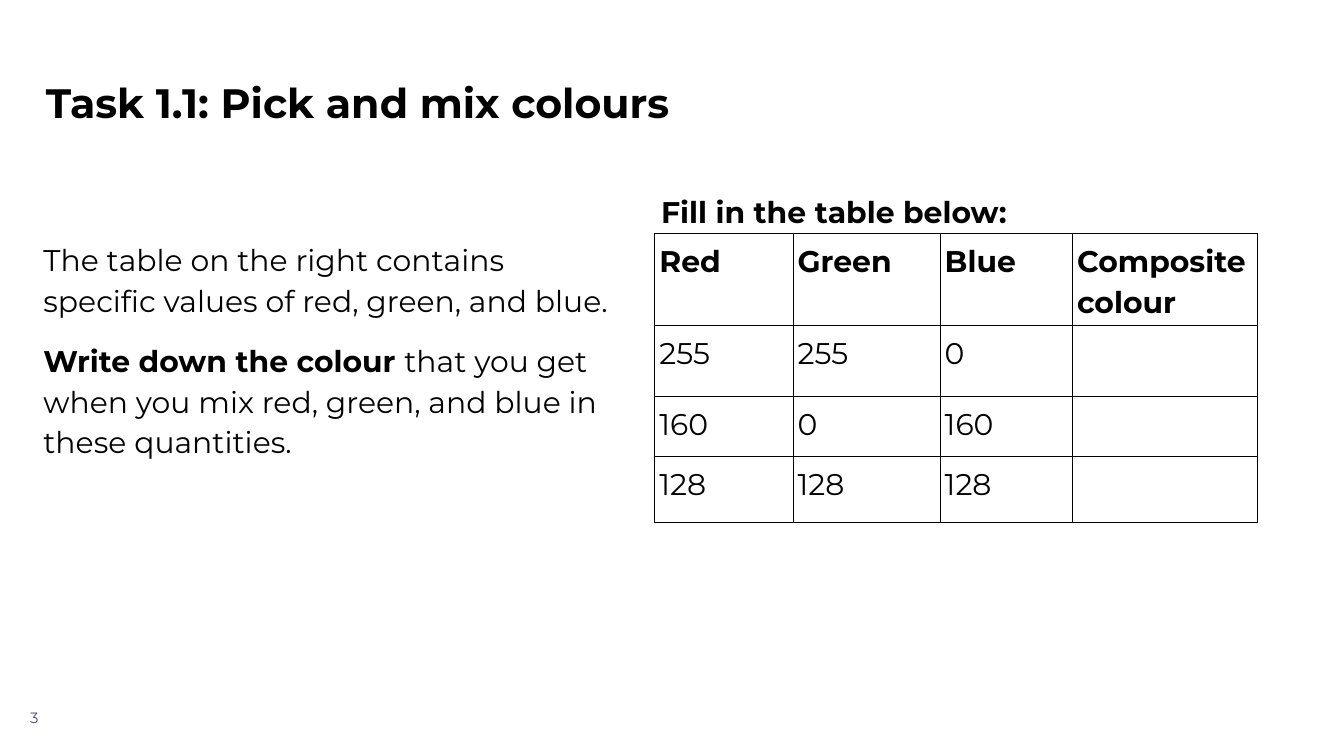
from pptx import Presentation
from pptx import util as u
from pptx.dml import color
from pptx.enum import text
from pptx.oxml import parse_xml
from pptx.oxml.ns import nsdecls

TITLE_ONLY = 5
BLACK = "000000"
PURPLE = "494985"


def rgb(value):
    return color.RGBColor.from_string(value)


def set_values(target, values):
    for name, value in values.items():
        setattr(target, name, value)


def margins(left, top, right, bottom):
    names = ("margin_left", "margin_top", "margin_right", "margin_bottom")
    return dict(zip(names, map(u.Cm, (left, top, right, bottom))))


class SlideBuilder:
    font = "Montserrat"
    line_spacing = 1.15

    def __init__(self, deck):
        self.slide = deck.slides.add_slide(deck.slide_layouts[TITLE_ONLY])

    def fill_paragraph(self, para, spans, size=32, fill=BLACK, **para_format):
        """Fill a paragraph with (wording, bold) spans."""
        set_values(para, {"alignment": text.PP_ALIGN.LEFT,
                          "line_spacing": self.line_spacing, **para_format})
        for wording, bold in spans:
            span = para.add_run()
            span.text = wording
            set_values(span.font, {"name": self.font, "size": u.Pt(size), "bold": bold})
            span.font.color.rgb = rgb(fill)

    def title(self, wording, left, top, width, height):
        box = self.slide.shapes.title
        set_values(box, {"left": u.Cm(left), "top": u.Cm(top),
                         "width": u.Cm(width), "height": u.Cm(height)})
        set_values(box.text_frame, {"word_wrap": True, "auto_size": text.MSO_AUTO_SIZE.NONE,
                                    "vertical_anchor": text.MSO_ANCHOR.MIDDLE,
                                    **margins(0, 0, 0, 0)})
        self.fill_paragraph(box.text_frame.paragraphs[0], [(wording, True)], size=44)

    def text_box(self, paragraphs, left, top, width, height, insets, gap=0, **style):
        """Add a box of paragraphs, with gap points between them."""
        box = self.slide.shapes.add_textbox(*map(u.Cm, (left, top, width, height)))
        frame = box.text_frame
        set_values(frame, {"word_wrap": True, **margins(*insets)})
        for index, spans in enumerate(paragraphs):
            para = frame.add_paragraph() if index else frame.paragraphs[0]
            self.fill_paragraph(para, spans, space_before=u.Pt(gap if index else 0), **style)

    def border(self, cell):
        properties = cell._tc.get_or_add_tcPr()
        for side in "LRTB":
            properties.append(parse_xml(
                f'<a:ln{side} {nsdecls("a")} w="{u.Pt(0.75)}"><a:solidFill>'
                f'<a:srgbClr val="{BLACK}"/></a:solidFill></a:ln{side}>'))

    def table(self, rows, left, top, widths, heights):
        frame = self.slide.shapes.add_table(
            len(rows), len(widths),
            *map(u.Cm, (left, top, sum(widths), sum(heights))))
        table = frame.table
        set_values(table, {"first_row": False, "horz_banding": False})
        for column, width in zip(table.columns, widths):
            column.width = u.Cm(width)
        for row_index, (row, height) in enumerate(zip(rows, heights)):
            table.rows[row_index].height = u.Cm(height)
            for column_index, wording in enumerate(row):
                cell = table.cell(row_index, column_index)
                set_values(cell, margins(0.18, 0.18, 0.18, 0.18))
                self.border(cell)
                cell.fill.background()
                if wording:
                    self.fill_paragraph(cell.text_frame.paragraphs[0],
                                        [(wording, row_index == 0)],
                                        alignment=text.PP_ALIGN.JUSTIFY)


def main():
    deck = Presentation()
    set_values(deck, {"slide_width": u.Cm(50.8), "slide_height": u.Cm(28.58)})
    page = SlideBuilder(deck)

    page.title("Task 1.1: Pick and mix colours", 1.73, 1.78, 47.35, 3.89)
    page.text_box(
        [[("The table on the right contains specific values of red, green, and blue.", False)],
         [("Write down the colour ", True),
          ("that you get when you mix red, green, and blue in these quantities.", False)]],
        1.14, 8.46, 22.76, 6.2, insets=(0.5, 0.5, 0.3, 0.5), gap=20, line_spacing=1.14)
    page.text_box([[("3", False)]], 1.14, 26.77, 1.73, 1.75, insets=(0, 0, 0, 0),
                  size=16, fill=PURPLE, line_spacing=1.0)
    page.table(
        [("Red", "Green", "Blue", "Composite colour"),
         ("255", "255", "0", ""),
         ("160", "0", "160", ""),
         ("128", "128", "128", "")],
        24.74, 8.81, widths=(5.23, 5.56, 5.0, 6.99), heights=(3.48, 2.69, 2.26, 2.51))
    page.text_box([[("Fill in the table below:", True)]], 24.74, 6.88, 20.9, 1.75,
                  insets=(0.25, 0.25, 0.25, 0.25))

    deck.save("out.pptx")


if __name__ == "__main__":
    main()
